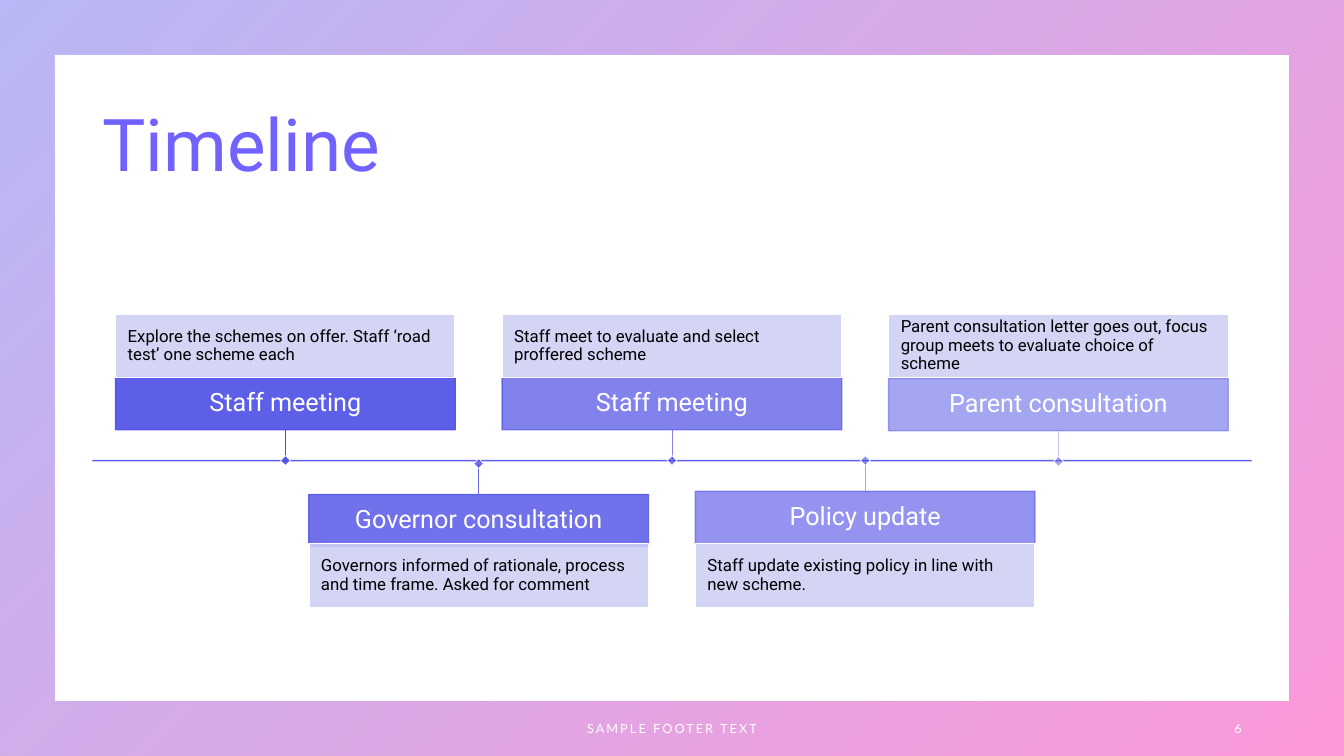
from pptx import Presentation
from pptx.dml.color import RGBColor
from pptx.enum.shapes import MSO_CONNECTOR, MSO_SHAPE
from pptx.enum.text import MSO_ANCHOR, MSO_AUTO_SIZE, PP_ALIGN
from pptx.oxml.ns import qn
from pptx.oxml.xmlchemy import OxmlElement
from pptx.util import Pt

INDIGO = RGBColor(0x4D, 0x4E, 0xE6)
PINK = RGBColor(0xF9, 0x00, 0xA0)
VIOLET = RGBColor(0x71, 0x62, 0xFE)
LILAC = RGBColor(0xD0, 0xD0, 0xF5)
WHITE = RGBColor(0xFF, 0xFF, 0xFF)
BLACK = RGBColor(0x00, 0x00, 0x00)

SLIDE_W, SLIDE_H = 960, 540
CARD_W, HEAD_H, NOTE_H = 242.6, 37.4, 45.4
STEM, DOT = 22, 5

# Heading, note, opacity, stem colour, downward nudge from the axis
STAGES = [
    ("Staff meeting",
     "Explore the schemes on offer. Staff ‘road test’ one scheme each",
     90, RGBColor(0x4A, 0x4B, 0xDC), 0),
    ("Governor consultation",
     "Governors informed of rationale, process and time frame. Asked for comment",
     80, RGBColor(0x68, 0x68, 0xE2), 2.2),
    ("Staff meeting",
     "Staff meet to evaluate and select proffered scheme",
     70, RGBColor(0x86, 0x86, 0xE7), 0),
    ("Policy update",
     "Staff update existing policy in line with new scheme.",
     60, RGBColor(0xA4, 0xA4, 0xED), 0),
    ("Parent consultation",
     "Parent consultation letter goes out, focus group meets to evaluate choice of scheme",
     50, RGBColor(0xC2, 0xC2, 0xF3), 0.7),
]


def fade(parent, percent):
    """Make every colour under an element partly transparent."""
    for clr in parent.iter(qn("a:srgbClr")):
        alpha = OxmlElement("a:alpha")
        alpha.set("val", str(percent * 1000))
        clr.append(alpha)


def add_box(slide, box, fill, opacity, line, line_opacity, weight):
    sp = slide.shapes.add_shape(MSO_SHAPE.RECTANGLE, *map(Pt, box))
    sp.shadow.inherit = False
    sp.fill.solid()
    sp.fill.fore_color.rgb = fill
    fade(sp._element.spPr, opacity)
    sp.line.color.rgb = line
    sp.line.width = Pt(weight)
    fade(sp.line._get_or_add_ln(), line_opacity)
    return sp


def add_line(slide, start, end, color, weight):
    cx = slide.shapes.add_connector(MSO_CONNECTOR.STRAIGHT, *map(Pt, start + end))
    cx.line.color.rgb = color
    cx.line.width = Pt(weight)
    cx._element.spPr.append(OxmlElement("a:effectLst"))
    return cx


def write(sp, text, size, color, align, inset=None, font="Roboto", spacing=0.9):
    tf = sp.text_frame
    tf.text = text
    tf.word_wrap = True
    tf.auto_size = MSO_AUTO_SIZE.NONE
    tf.vertical_anchor = MSO_ANCHOR.MIDDLE
    if inset is not None:
        tf.margin_left = tf.margin_right = Pt(inset)
        tf.margin_top = tf.margin_bottom = Pt(inset)
    p = tf.paragraphs[0]
    p.alignment = align
    p.line_spacing = spacing
    r = p.runs[0]
    r.font.name = font
    r.font.size = Pt(size)
    r.font.color.rgb = color
    return r


def add_frame(slide, box):
    sp = slide.shapes.add_shape(MSO_SHAPE.FRAME, *map(Pt, box))
    sp.adjustments[0] = 0.072
    sp.shadow.inherit = False
    sp.line.fill.background()
    sp.fill.gradient()
    sp.fill.gradient_angle = 315
    for stop, color, position in zip(sp.fill.gradient_stops, (INDIGO, PINK), (0, 1)):
        stop.color.rgb = color
        stop.position = position
    fade(sp._element.spPr, 40)


def add_title(slide, box, text):
    sp = slide.shapes.title
    sp.left, sp.top, sp.width, sp.height = map(Pt, box)
    write(sp, text, 52, VIOLET, PP_ALIGN.LEFT)


def add_stage(slide, left, axis_y, above, stage):
    heading, note, opacity, stem_color, nudge = stage
    mid_x, dot_y = left + CARD_W / 2, axis_y + nudge
    if above:
        head_y = dot_y - STEM - HEAD_H
        note_y = axis_y - STEM - HEAD_H - NOTE_H
    else:
        head_y = dot_y + STEM
        note_y = axis_y + STEM + HEAD_H

    # Heading and note
    head = add_box(slide, (left, head_y, CARD_W, HEAD_H),
                   INDIGO, opacity, INDIGO, opacity, 1)
    write(head, heading, 18, WHITE, PP_ALIGN.CENTER, 7.2)
    body = add_box(slide, (left, note_y, CARD_W, NOTE_H), LILAC, 90, WHITE, 100, 1)
    write(body, note, 12, BLACK, PP_ALIGN.LEFT, 8.64)

    # Stem and marker on the axis
    stem = add_line(slide, (mid_x, dot_y), (mid_x, dot_y), stem_color, 0.5)
    stem.begin_connect(head, 2 if above else 0)
    dot = add_box(slide, (mid_x - DOT / 2, dot_y - DOT / 2, DOT, DOT),
                  INDIGO, opacity, WHITE, 100, 0.5)
    dot.rotation = 45


def add_timeline(slide, box):
    left, top, width, height = box
    axis_y = top + height / 2
    axis = add_line(slide, (left, axis_y), (left + width, axis_y), INDIGO, 1)
    fade(axis.line._get_or_add_ln(), 90)
    margin = 16.6
    step = (width - 2 * margin - CARD_W) / (len(STAGES) - 1)
    for i, stage in enumerate(STAGES):
        add_stage(slide, left + margin + i * step, axis_y, i % 2 == 0, stage)


def add_footer(slide, box, text, align):
    sp = slide.shapes.add_textbox(*map(Pt, box))
    r = write(sp, text, 9, WHITE, align, font="Lato", spacing=1.0)
    r.font._element.set("spc", "150")


def main():
    prs = Presentation()
    prs.slide_width, prs.slide_height = Pt(SLIDE_W), Pt(SLIDE_H)
    slide = prs.slides.add_slide(prs.slide_layouts[5])
    add_frame(slide, (0, 0, SLIDE_W, SLIDE_H))
    add_title(slide, (66, 53.3, 828, 104.4), "Timeline")
    add_timeline(slide, (66, 224, 828, 210))
    add_footer(slide, (318, 506, 324, 29), "SAMPLE FOOTER TEXT", PP_ALIGN.CENTER)
    add_footer(slide, (678, 506, 216, 29), "6", PP_ALIGN.RIGHT)
    prs.save("out.pptx")


if __name__ == "__main__":
    main()
